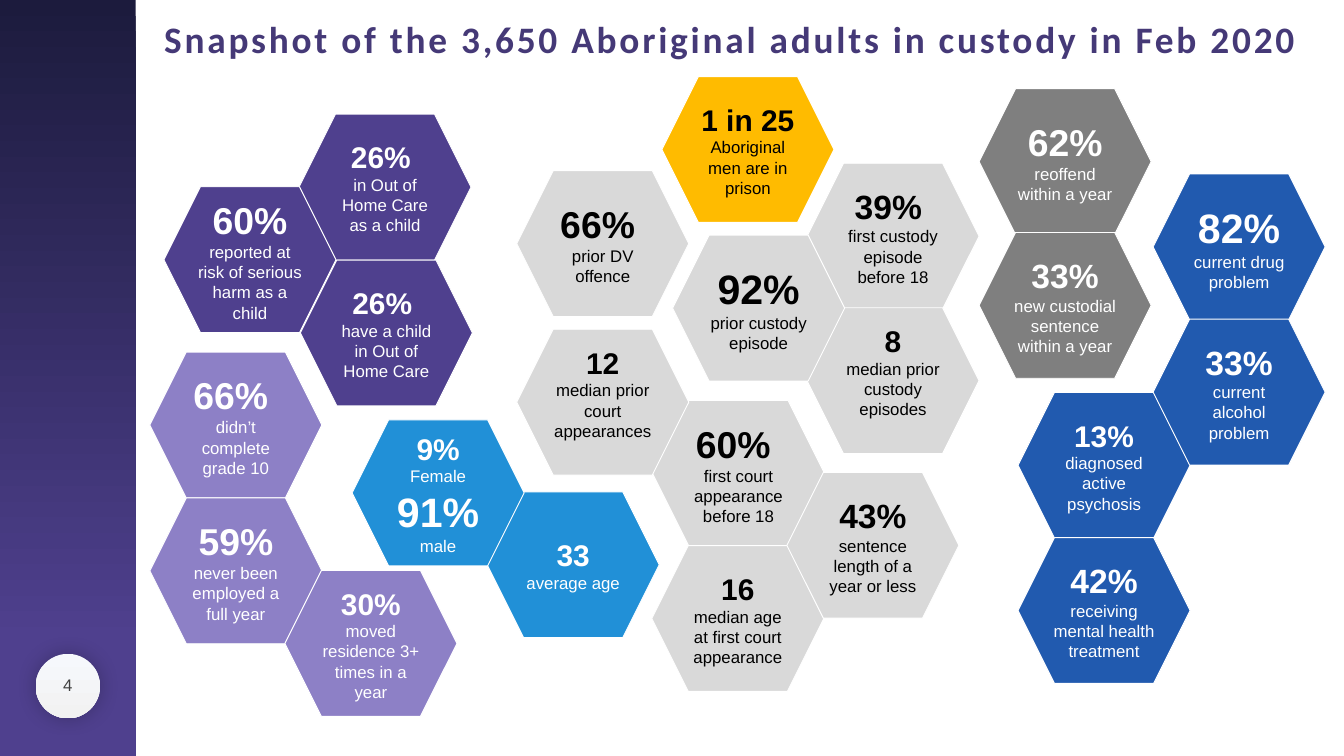
"""Build the custody snapshot slide as clusters of coloured hexagon facts."""
from typing import Any, NamedTuple

from lxml.etree import SubElement
from pptx import Presentation
from pptx.dml.color import RGBColor
from pptx.enum.shapes import MSO_SHAPE as Shape
from pptx.enum.text import MSO_ANCHOR as Anchor, PP_ALIGN as Align
from pptx.oxml.ns import qn
from pptx.util import Inches, Pt

WHITE = RGBColor(0xFF, 0xFF, 0xFF)
BLACK = RGBColor(0x00, 0x00, 0x00)
CHARCOAL = RGBColor(0x40, 0x40, 0x40)
TITLE = RGBColor(0x45, 0x39, 0x77)
NIGHT = RGBColor(0x1C, 0x1B, 0x3D)
PURPLE = RGBColor(0x4F, 0x40, 0x8E)
LILAC = RGBColor(0x8D, 0x80, 0xC6)
SKY = RGBColor(0x21, 0x90, 0xD7)
BLUE = RGBColor(0x21, 0x5A, 0xAF)
SILVER = RGBColor(0xD9, 0xD9, 0xD9)
GREY = RGBColor(0x7F, 0x7F, 0x7F)
GOLD = RGBColor(0xFF, 0xBB, 0x00)
BADGE_TOP = RGBColor(0xF6, 0xF8, 0xFC)
BADGE_BOTTOM = RGBColor(0xF2, 0xF2, 0xF2)

HEX_WIDTH, HEX_HEIGHT = 2.56, 2.17
CAPTION_SIZE = 18
LIFT = 0.29


class Fact(NamedTuple):
    figure: str
    size: int
    caption: str
    joined: bool = False


class Tile(NamedTuple):
    left: float
    top: float
    facts: tuple[Fact, ...]
    lift: float = 0


class Cluster(NamedTuple):
    fill: RGBColor
    ink: RGBColor
    tiles: tuple[Tile, ...]


CLUSTERS = (
    Cluster(SILVER, BLACK, (
        Tile(7.69, 2.54, (Fact("66% ", 40, "prior DV offence"),)),
        Tile(9.71, 5.96, (Fact("60% ", 40, "first court appearance before 18"),)),
        Tile(9.7, 8.12, (Fact("16", 32, "median age at first court appearance"),)),
        Tile(12.01, 2.43, (Fact("39% ", 36, "first custody episode before 18"),)),
        Tile(7.69, 4.9, (Fact("12", 32, "median prior court appearances"),), LIFT),
        Tile(12.01, 4.58, (Fact("8", 32, "median prior custody episodes"),), LIFT),
        Tile(10.01, 3.5, (Fact("92% ", 44, "prior custody episode", True),)),
        Tile(11.71, 7.03, (Fact("43%", 36, "sentence length of a year or less"),)),
    )),
    Cluster(PURPLE, WHITE, (
        Tile(4.45, 1.7, (Fact("26% ", 32, "in Out of Home Care as a child"),)),
        Tile(2.44, 2.78, (Fact("60% ", 40, "reported at risk of serious harm as a child", True),)),
        Tile(4.47, 3.87, (Fact("26% ", 32, "have a child in Out of Home Care"),)),
    )),
    Cluster(SKY, WHITE, (
        Tile(7.25, 7.32, (Fact("33", 32, "average age"),)),
        Tile(5.24, 6.25, (Fact("9% ", 32, "Female", True), Fact("91%", 44, "male"))),
    )),
    Cluster(LILAC, WHITE, (
        Tile(2.23, 5.24, (Fact("66% ", 40, "didn’t complete grade 10"),)),
        Tile(2.23, 7.41, (Fact("59% ", 40, "never been employed a full year", True),)),
        Tile(4.24, 8.49, (Fact("30%", 32, "moved residence 3+ times in a year"),)),
    )),
    Cluster(BLUE, WHITE, (
        Tile(17.16, 2.59, (Fact("82% ", 44, "current drug problem", True),)),
        Tile(15.15, 5.84, (Fact("13% ", 32, "diagnosed active psychosis", True),)),
        Tile(17.16, 4.75, (Fact("33%", 36, "current alcohol problem"),)),
        Tile(15.15, 8, (Fact("42% ", 36, "receiving mental health treatment", True),)),
    )),
    Cluster(GREY, WHITE, (
        Tile(14.57, 1.32, (Fact("62% ", 40, "reoffend within a year", True),)),
        Tile(14.57, 3.46, (Fact("33% ", 36, "new custodial sentence within a year", True),)),
    )),
    Cluster(GOLD, BLACK, (
        Tile(9.85, 1.14, (Fact("1 in 25", 32, "Aboriginal men are in prison"),)),
    )),
)


def add_span(para: Any, text: str, size: int, color: RGBColor,
             bold: bool = False, name: str = "Arial") -> Any:
    """Append one formatted run to a centred paragraph."""
    para.alignment = Align.CENTER
    span = para.add_run()
    span.text = text
    for key, value in {"name": name, "size": Pt(size), "bold": bold}.items():
        setattr(span.font, key, value)
    span.font.color.rgb = color
    return span


def add_tile(page: Any, tile: Tile, fill: RGBColor, ink: RGBColor) -> None:
    """Draw a hexagon holding its figures and captions."""
    box = page.shapes.add_shape(Shape.HEXAGON, Inches(tile.left), Inches(tile.top),
                                Inches(HEX_WIDTH), Inches(HEX_HEIGHT))
    box.shadow.inherit = False
    box.fill.solid()
    box.fill.fore_color.rgb = fill
    box.line.color.rgb = WHITE
    box.line.width = Pt(1)
    frame = box.text_frame
    layout = {"word_wrap": True, "vertical_anchor": Anchor.MIDDLE,
              "margin_bottom": Inches(0.05 + tile.lift)}
    for key, value in layout.items():
        setattr(frame, key, value)
    for index, fact in enumerate(tile.facts):
        para = frame.add_paragraph() if index else frame.paragraphs[0]
        add_span(para, fact.figure, fact.size, ink, bold=True)
        if not fact.joined:
            para = frame.add_paragraph()
        add_span(para, fact.caption, CAPTION_SIZE, ink)


def add_gradient(page: Any, kind: Shape, place: tuple[float, ...],
                 stops: tuple[tuple[float, RGBColor], ...]) -> Any:
    """Draw an unlined shape shaded from top to bottom."""
    box = page.shapes.add_shape(kind, *map(Inches, place))
    box.shadow.inherit = False
    box.line.fill.background()
    box.fill.gradient()
    box.fill.gradient_angle = 270
    for stop, (position, color) in zip(box.fill.gradient_stops, stops):
        stop.position = position
        stop.color.rgb = color
    return box


def add_glow_shadow(box: Any) -> None:
    """Give a shape a soft centred shadow."""
    effects = box._element.spPr.find(qn("a:effectLst"))
    shadow = SubElement(effects, qn("a:outerShdw"), blurRad=str(Pt(22)),
                        dist="0", dir="0", algn="ctr", rotWithShape="0")
    color = SubElement(shadow, qn("a:srgbClr"), val=str(BLACK))
    SubElement(color, qn("a:alpha"), val="24000")


def add_label(page: Any, place: tuple[float, ...], text: str, size: int,
              color: RGBColor, wrap: bool = True, **style: Any) -> Any:
    """Add a one-line text box and return its run."""
    frame = page.shapes.add_textbox(*map(Inches, place)).text_frame
    frame.word_wrap = wrap
    frame.vertical_anchor = Anchor.MIDDLE
    return add_span(frame.paragraphs[0], text, size, color, **style)


def main() -> None:
    """Assemble and save the slide."""
    deck = Presentation()
    deck.slide_width, deck.slide_height = Inches(20), Inches(11.25)
    page = deck.slides.add_slide(deck.slide_layouts[6])
    add_gradient(page, Shape.RECTANGLE, (0, 0, 2.02, 11.25), ((0, NIGHT), (0.85, PURPLE)))
    badge = add_gradient(page, Shape.OVAL, (0.53, 9.73, 0.96, 0.96),
                         ((0, BADGE_TOP), (1, BADGE_BOTTOM)))
    add_glow_shadow(badge)
    add_label(page, (0.53, 9.8, 0.96, 0.78), "4", 18, CHARCOAL)
    title = add_label(page, (2.23, 0.19, 17.28, 0.77),
                      "Snapshot of the 3,650 Aboriginal adults in custody in Feb 2020",
                      40, TITLE, wrap=False, bold=True, name="Calibri")
    title.font._element.set("spc", "300")
    for cluster in CLUSTERS:
        for tile in cluster.tiles:
            add_tile(page, tile, cluster.fill, cluster.ink)
    deck.save("out.pptx")


if __name__ == "__main__":
    main()
